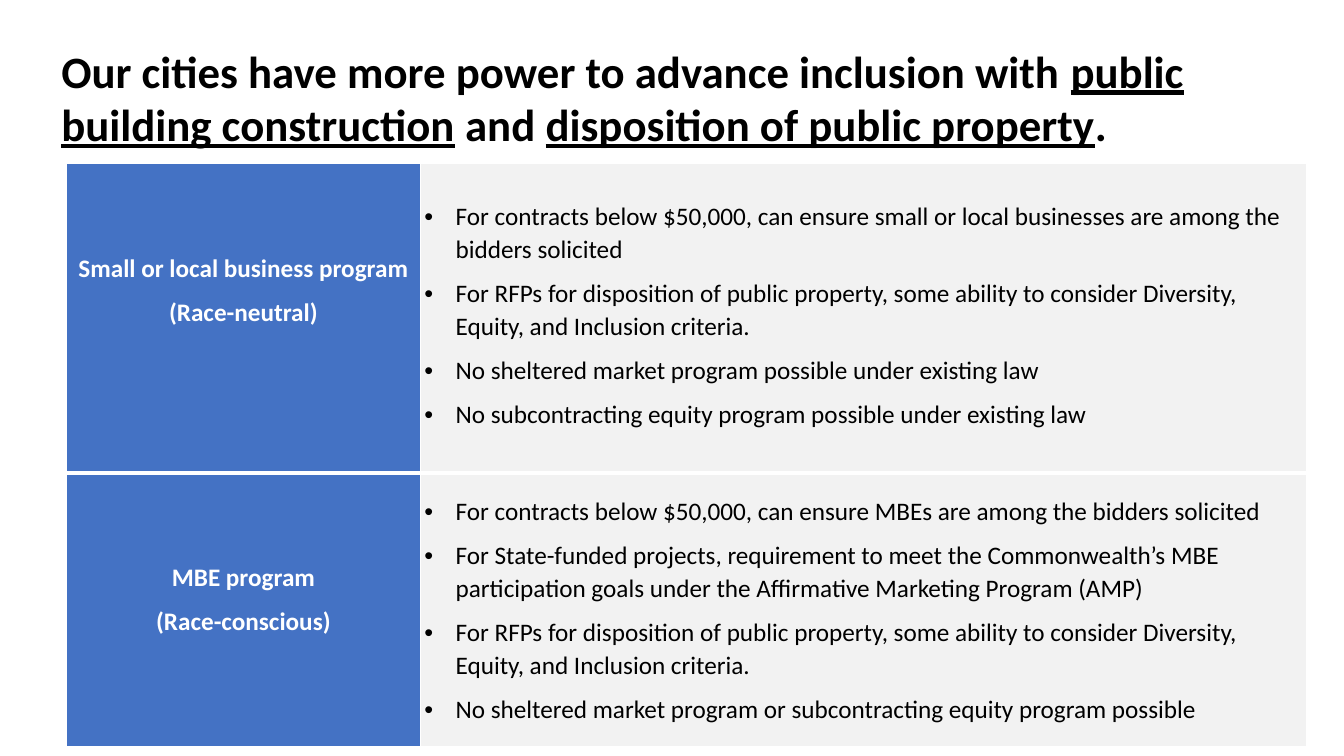
from lxml import etree
from pptx import Presentation
from pptx.dml.color import RGBColor
from pptx.enum.text import MSO_ANCHOR, PP_ALIGN
from pptx.oxml.ns import qn
from pptx.util import Inches, Pt

BLACK = RGBColor(0x00, 0x00, 0x00)
WHITE = RGBColor(0xFF, 0xFF, 0xFF)
BLUE = RGBColor(0x44, 0x72, 0xC4)
LIGHT_GRAY = RGBColor(0xF2, 0xF2, 0xF2)
FONT = "Calibri"

RFP_RULE = ("For RFPs for disposition of public property, some ability to consider "
            "Diversity, Equity, and Inclusion criteria.")
# Each program: row height, top margin of the rules, heading lines, rules
PROGRAMS = [
    (3.07, 0.36, ["Small or local business program", "(Race-neutral)"], [
        "For contracts below $50,000, can ensure small or local businesses are among "
        "the bidders solicited",
        RFP_RULE,
        "No sheltered market program possible under existing law",
        "No subcontracting equity program possible under existing law",
    ]),
    (2.72, 0.21, ["MBE program", "(Race-conscious)"], [
        "For contracts below $50,000, can ensure MBEs are among the bidders solicited",
        "For State-funded projects, requirement to meet the Commonwealth’s MBE "
        "participation goals under the Affirmative Marketing Program (AMP)",
        RFP_RULE,
        "No sheltered market program or subcontracting equity program possible",
    ]),
]
TITLE = [
    ("Our cities have more power to advance inclusion with ", False),
    ("public building construction", True),
    (" and ", False),
    ("disposition of public property", True),
    (".", False),
]


def add_run(paragraph, text, size=18, color=BLACK, bold=False, underline=False):
    run = paragraph.add_run()
    run.text = text
    font = run.font
    font.name, font.size, font.bold, font.underline = FONT, Pt(size), bold, underline
    font.color.rgb = color


def fill_cell(cell, lines, fill, top, color=BLACK, bold=False, bullets=False, borders=()):
    """Write one paragraph per line and set the cell's margins, borders and fill."""
    cell.margin_left = cell.margin_right = cell.margin_bottom = Inches(0.04)
    cell.margin_top = Inches(top)
    cell.vertical_anchor = MSO_ANCHOR.TOP
    cell_properties = cell._tc.get_or_add_tcPr()
    for side, width in borders:
        line = etree.SubElement(cell_properties, qn(f"a:{side}"), w=str(Pt(width)))
        line_fill = etree.SubElement(line, qn("a:solidFill"))
        etree.SubElement(line_fill, qn("a:srgbClr"), val=str(WHITE))
    cell.fill.solid()
    cell.fill.fore_color.rgb = fill

    for index, text in enumerate(lines):
        frame = cell.text_frame
        paragraph = frame.add_paragraph() if index else frame.paragraphs[0]
        paragraph.alignment = PP_ALIGN.LEFT if bullets else PP_ALIGN.CENTER
        paragraph.line_spacing = 1.07
        paragraph.space_after = Pt(8)
        if bullets:
            properties = paragraph._p.get_or_add_pPr()
            properties.set("marL", str(Inches(0.31)))
            properties.set("indent", str(-Inches(0.31)))
            etree.SubElement(properties, qn("a:buFont"), typeface="Arial")
            etree.SubElement(properties, qn("a:buChar"), char="•")
        add_run(paragraph, text, color=color, bold=bold)


presentation = Presentation()
presentation.slide_width = Inches(13.33)
presentation.slide_height = Inches(7.5)
slide = presentation.slides.add_slide(presentation.slide_layouts[6])

# Table of programs
table = slide.shapes.add_table(len(PROGRAMS), 2, Inches(0.66), Inches(1.62),
                               Inches(12.3), Inches(5.79)).table
table.first_row = table.horz_banding = False
for column, width in zip(table.columns, (3.51, 8.79)):
    column.width = Inches(width)

for row, (height, rules_top, heading, rules) in enumerate(PROGRAMS):
    table.rows[row].height = Inches(height)
    top_width, bottom_width = (1, 3) if row == 0 else (3, 1)
    borders = [("lnL", 1), ("lnR", 1), ("lnT", top_width), ("lnB", bottom_width)]
    fill_cell(table.cell(row, 0), heading, BLUE, 0.87, color=WHITE, bold=True, borders=borders)
    fill_cell(table.cell(row, 1), rules, LIGHT_GRAY, rules_top, bullets=True, borders=borders)

# Title
title = slide.shapes.add_textbox(Inches(0.51), Inches(0.38), Inches(12.3), Inches(1.18))
title.text_frame.word_wrap = True
for text, underline in TITLE:
    add_run(title.text_frame.paragraphs[0], text, size=32, bold=True, underline=underline)

presentation.save("out.pptx")
